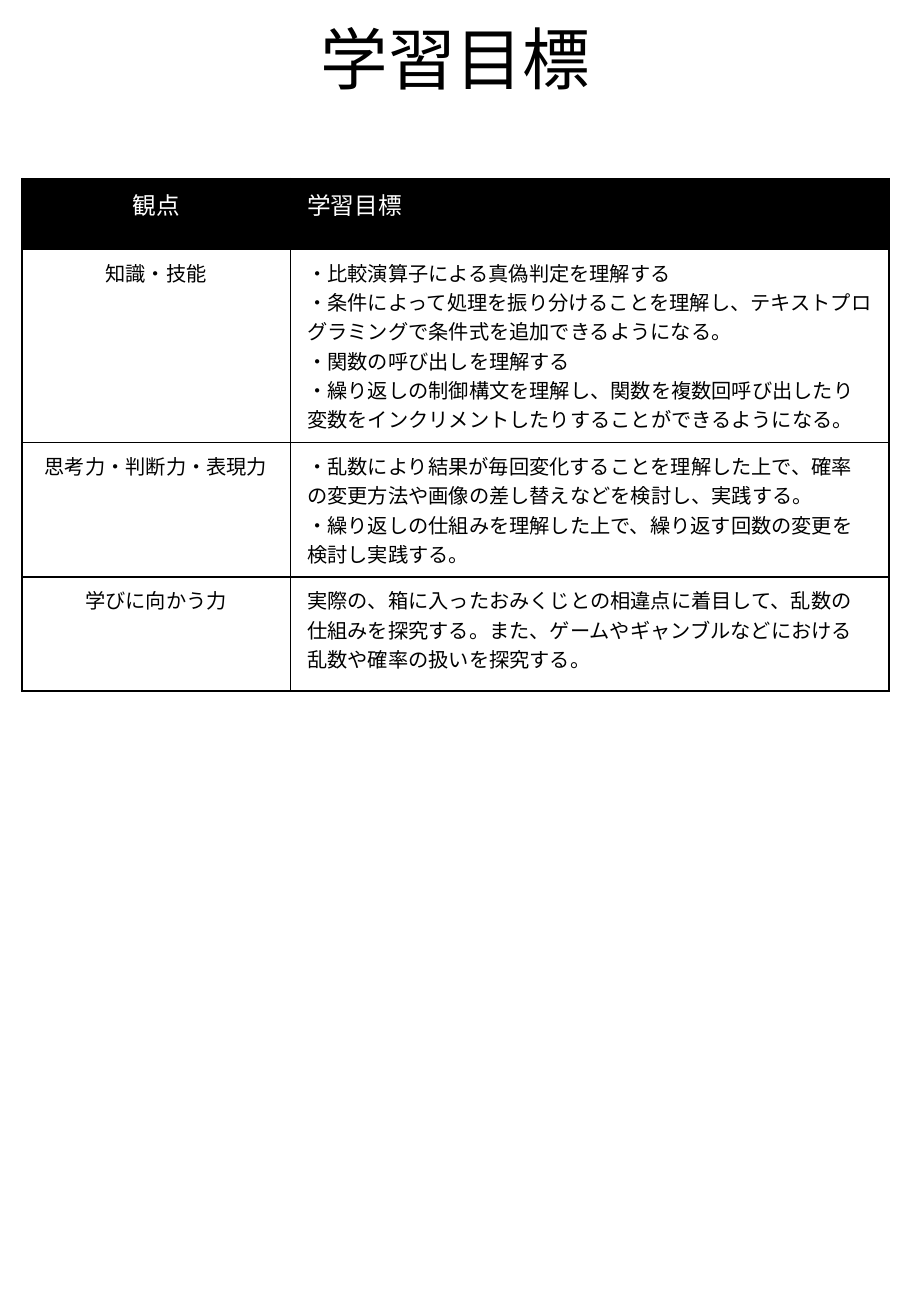
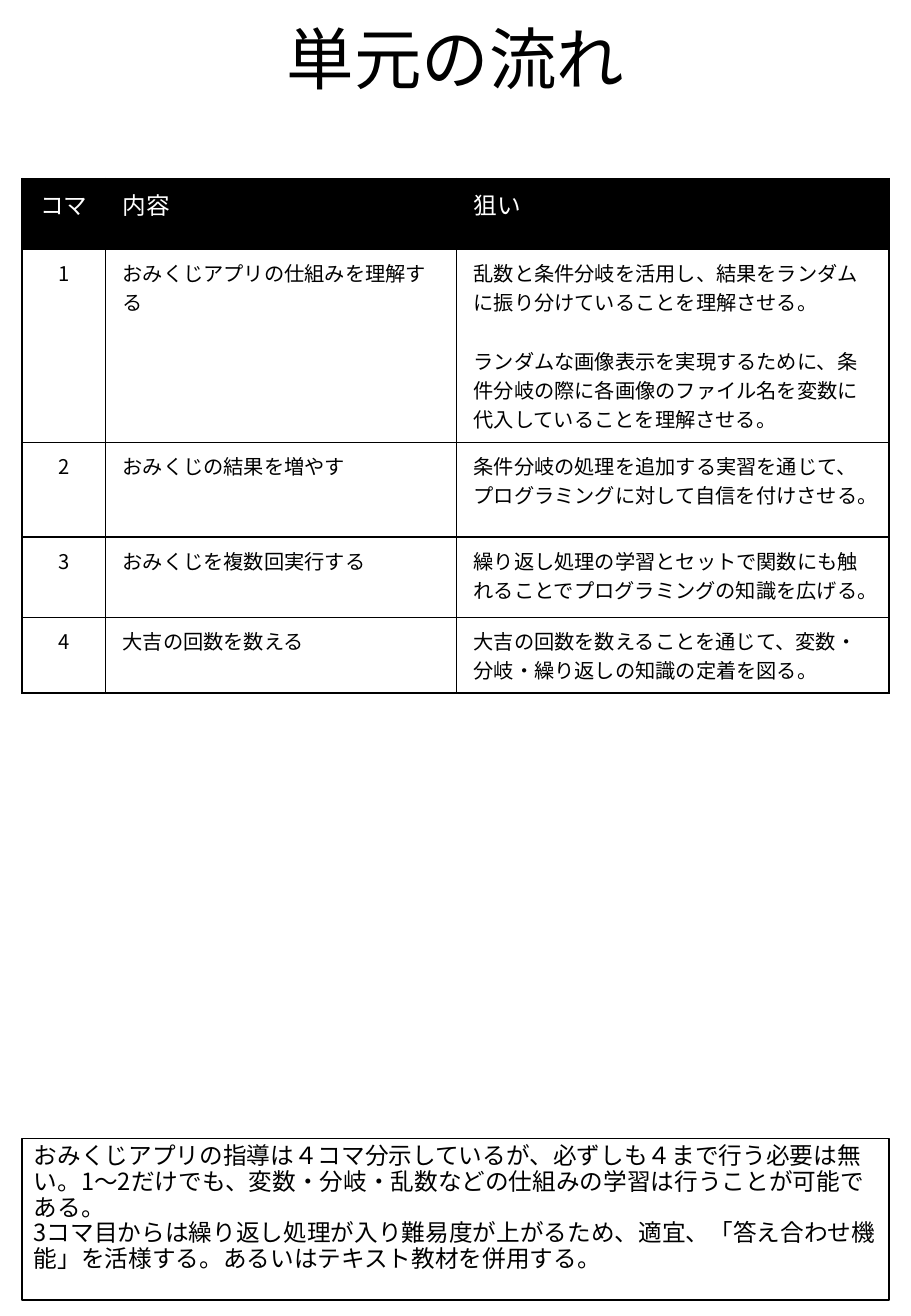
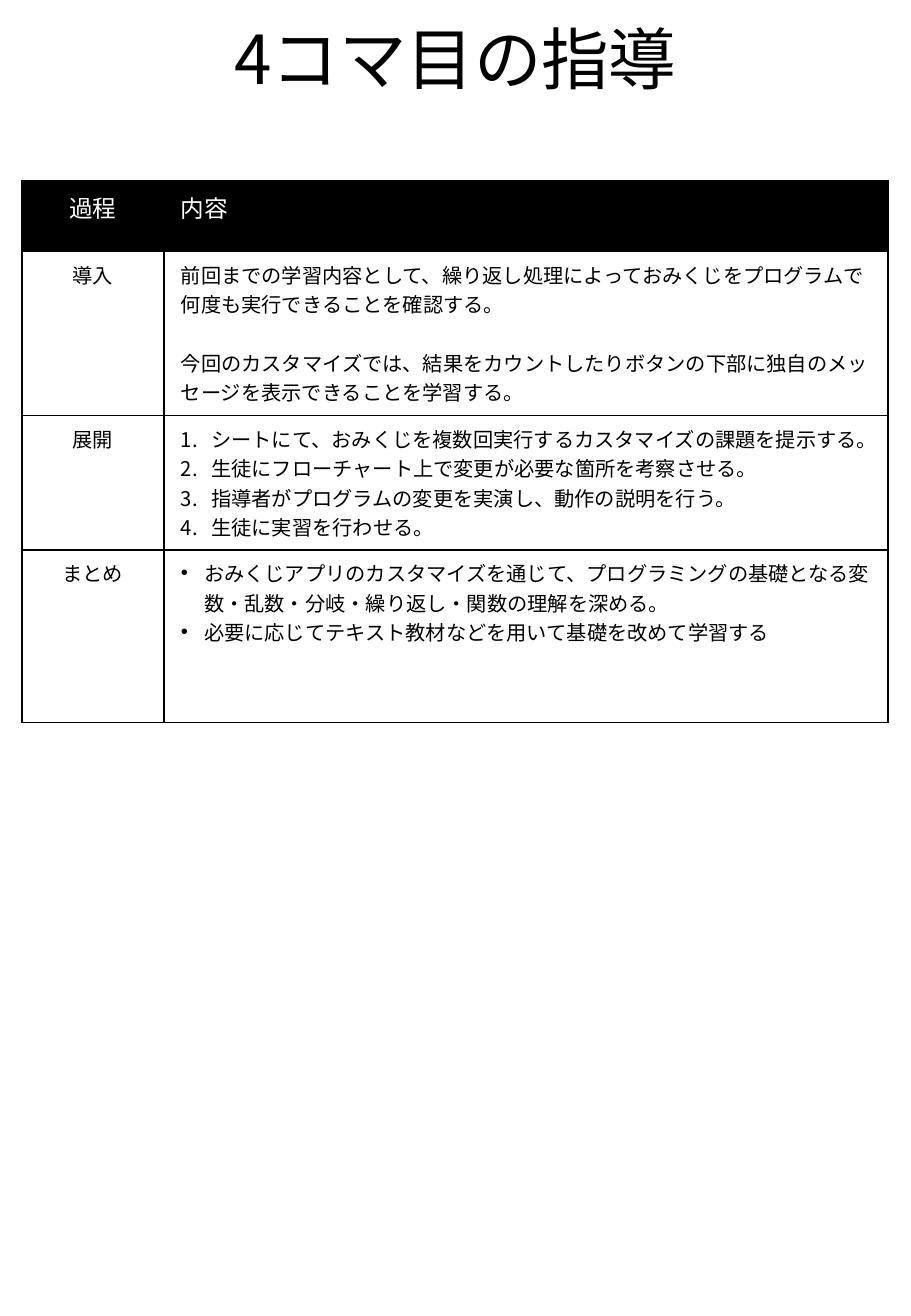
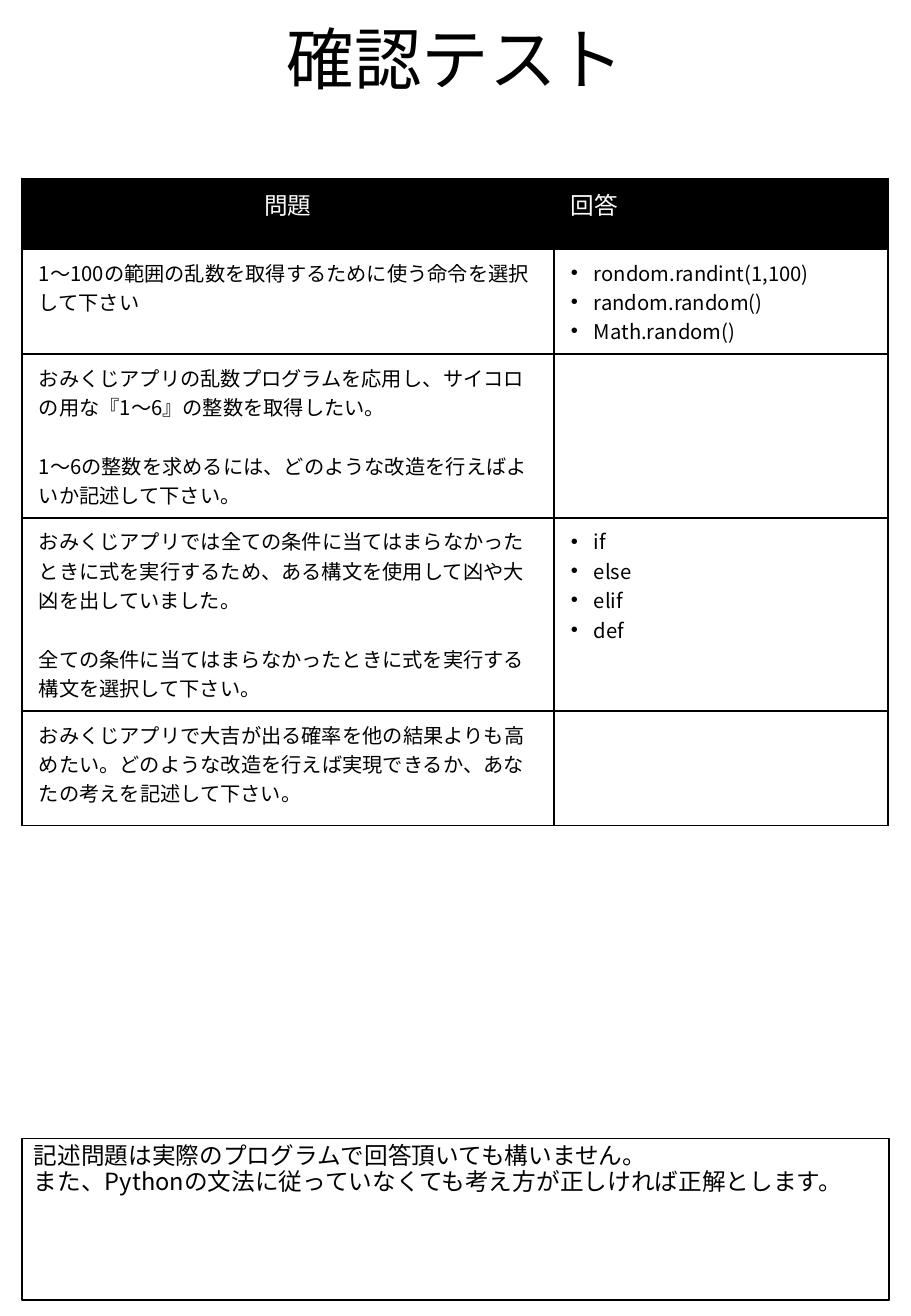
from lxml import etree
from pptx import Presentation
from pptx.dml.color import RGBColor
from pptx.enum import lang, shapes, text
from pptx.oxml import ns
from pptx.util import Inches, Pt

COLORS = {"ink": "000000", "paper": "FFFFFF"}
FONT = "Noto Sans CJK JP"
TITLE_BOX = (0.56, 0.06, 6.38, 0.81)
NOTE_BOX = (0.18, 9.37, 7.14, 1.33)
TABLE_LEFT, TABLE_TOP = 0.18, 1.47
HEADER_HEIGHT = 0.58
BLANK_LINE = 17.4  # points between separated paragraphs

# Paragraph style: (indent, bullet tag, bullet attributes)
BULLETS = {
    "dots": (0.19, "a:buChar", {"char": "•"}),
    "numbers": (0.25, "a:buAutoNum", {"type": "arabicPeriod"}),
}


def rgb(name):
    return RGBColor.from_string(COLORS[name])


def format_paragraph(p, size, color="ink", align=text.PP_ALIGN.LEFT, spacing=None):
    p.alignment = align
    p.line_spacing = spacing
    for r in p.runs:
        r.font.size = Pt(size)
        r.font.name = FONT
        r.font.bold = False
        r.font.color.rgb = rgb(color)
        r.font.language_id = lang.MSO_LANGUAGE_ID.JAPANESE
        r.font.fill  # colour precedes the typefaces
        latin = r._r.rPr.find(ns.qn("a:latin"))
        latin.addnext(etree.Element(ns.qn("a:ea"), typeface=FONT))


def fill_text(tf, lines):
    """Put each line in its own paragraph and return the paragraphs."""
    tf.text = lines[0]
    for line in lines[1:]:
        tf.add_paragraph().text = line
    return tf.paragraphs


def add_bullet(p, style):
    indent, tag, attributes = BULLETS[style]
    pPr = p._p.get_or_add_pPr()
    pPr.set("marL", str(Inches(indent)))
    pPr.set("indent", str(-Inches(indent)))
    font = etree.SubElement(pPr, ns.qn("a:buFont"))
    font.set("typeface", "Arial" if style == "dots" else "+mj-lt")
    etree.SubElement(pPr, ns.qn(tag), attributes)


def add_borders(cell):
    tcPr = cell._tc.get_or_add_tcPr()
    for i, side in enumerate(("lnL", "lnR", "lnT", "lnB")):
        ln = etree.Element(ns.qn("a:" + side), w=str(Pt(1)))
        fill = etree.SubElement(ln, ns.qn("a:solidFill"))
        etree.SubElement(fill, ns.qn("a:srgbClr"), val=COLORS["ink"])
        tcPr.insert(i, ln)


def format_cell(cell, content, header, centered):
    """Content is a string, or a (style, lines) pair."""
    style, lines = ("plain", [content]) if isinstance(content, str) else content
    cell.margin_left = cell.margin_right = Inches(0.14)
    cell.margin_top = cell.margin_bottom = Inches(0.07)
    cell.fill.solid()
    cell.fill.fore_color.rgb = rgb("ink" if header else "paper")
    add_borders(cell)
    align = text.PP_ALIGN.CENTER if centered else text.PP_ALIGN.LEFT
    for i, p in enumerate(fill_text(cell.text_frame, lines)):
        format_paragraph(p, 14 if header else 12, "paper" if header else "ink", align)
        if style == "apart" and i:
            p.space_before = Pt(BLANK_LINE)
        if style in BULLETS:
            add_bullet(p, style)


def add_grid(s, left, top, widths, heights, rows, center_first=True):
    heights = [HEADER_HEIGHT] + heights
    frame = s.shapes.add_table(len(rows), len(widths), Inches(left), Inches(top),
                               Inches(sum(widths)), Inches(sum(heights)))
    table = frame.table
    table.first_row = table.horz_banding = False
    for column, width in zip(table.columns, widths):
        column.width = Inches(width)
    for row, height in zip(table.rows, heights):
        row.height = Inches(height)
    for i, row in enumerate(rows):
        for j, content in enumerate(row):
            centered = j == 0 and (i == 0 or center_first)
            format_cell(table.cell(i, j), content, i == 0, centered)


def add_note(s, box, lines):
    sp = s.shapes.add_shape(shapes.MSO_SHAPE.RECTANGLE, *map(Inches, box))
    sp.shadow.inherit = False
    sp.fill.solid()
    sp.fill.fore_color.rgb = rgb("paper")
    sp.line.color.rgb = rgb("ink")
    sp.line.width = Pt(1)
    tf = sp.text_frame
    tf.word_wrap = True
    tf.vertical_anchor = text.MSO_ANCHOR.TOP
    for p in fill_text(tf, lines):
        format_paragraph(p, 14, spacing=0.9)


def add_lesson_slide(prs, title, widths, heights, rows, top=TABLE_TOP,
                     center_first=True, note=None):
    s = prs.slides.add_slide(prs.slide_layouts[5])
    # Title
    sp = s.shapes.title
    sp.left, sp.top, sp.width, sp.height = map(Inches, TITLE_BOX)
    tf = sp.text_frame
    tf.text = title
    tf.auto_size = text.MSO_AUTO_SIZE.NONE
    tf.vertical_anchor = text.MSO_ANCHOR.BOTTOM
    format_paragraph(tf.paragraphs[0], 40, align=text.PP_ALIGN.CENTER, spacing=0.9)
    # Table and note
    add_grid(s, TABLE_LEFT, top, widths, heights, rows, center_first)
    if note:
        add_note(s, NOTE_BOX, note)


def main():
    prs = Presentation()
    prs.slide_width, prs.slide_height = Inches(7.5), Inches(10.83)

    # Learning goals
    add_lesson_slide(prs, "学習目標", [2.21, 4.93], [1.09, 0.77, 0.94], [
        ("観点", "学習目標"),
        ("知識・技能", ("plain", [
            "・比較演算子による真偽判定を理解する",
            "・条件によって処理を振り分けることを理解し、テキストプログラミングで条件式を追加できるようになる。",
            "・関数の呼び出しを理解する",
            "・繰り返しの制御構文を理解し、関数を複数回呼び出したり変数をインクリメントしたりすることができるようになる。"])),
        ("思考力・判断力・表現力", ("plain", [
            "・乱数により結果が毎回変化することを理解した上で、確率の変更方法や画像の差し替えなどを検討し、実践する。",
            "・繰り返しの仕組みを理解した上で、繰り返す回数の変更を検討し実践する。"])),
        ("学びに向かう力",
         "実際の、箱に入ったおみくじとの相違点に着目して、乱数の仕組みを探究する。"
         "また、ゲームやギャンブルなどにおける乱数や確率の扱いを探究する。"),
    ])

    # Unit flow
    add_lesson_slide(prs, "単元の流れ", [0.69, 2.89, 3.56], [1.1, 0.78, 0.66, 0.58], [
        ("コマ", "内容", "狙い"),
        ("1", "おみくじアプリの仕組みを理解する", ("apart", [
            "乱数と条件分岐を活用し、結果をランダムに振り分けていることを理解させる。",
            "ランダムな画像表示を実現するために、条件分岐の際に各画像のファイル名を変数に代入していることを理解させる。"])),
        ("2", "おみくじの結果を増やす",
         "条件分岐の処理を追加する実習を通じて、プログラミングに対して自信を付けさせる。"),
        ("3", "おみくじを複数回実行する",
         "繰り返し処理の学習とセットで関数にも触れることでプログラミングの知識を広げる。"),
        ("4", "大吉の回数を数える",
         "大吉の回数を数えることを通じて、変数・分岐・繰り返しの知識の定着を図る。"),
    ], note=[
        "おみくじアプリの指導は４コマ分示しているが、必ずしも４まで行う必要は無い。"
        "1～2だけでも、変数・分岐・乱数などの仕組みの学習は行うことが可能である。",
        "3コマ目からは繰り返し処理が入り難易度が上がるため、適宜、「答え合わせ機能」を活様する。"
        "あるいはテキスト教材を併用する。"])

    # Fourth lesson
    add_lesson_slide(prs, "4コマ目の指導", [1.17, 5.96], [1.1, 0.78, 1.42], [
        ("過程", "内容"),
        ("導入", ("apart", [
            "前回までの学習内容として、繰り返し処理によっておみくじをプログラムで何度も実行できることを確認する。",
            "今回のカスタマイズでは、結果をカウントしたりボタンの下部に独自のメッセージを表示できることを学習する。"])),
        ("展開", ("numbers", [
            "シートにて、おみくじを複数回実行するカスタマイズの課題を提示する。",
            "生徒にフローチャート上で変更が必要な箇所を考察させる。",
            "指導者がプログラムの変更を実演し、動作の説明を行う。",
            "生徒に実習を行わせる。"])),
        ("まとめ", ("dots", [
            "おみくじアプリのカスタマイズを通じて、プログラミングの基礎となる変数・乱数・分岐・繰り返し・関数の理解を深める。",
            "必要に応じてテキスト教材などを用いて基礎を改めて学習する"])),
    ], top=1.49)

    # Quiz
    add_lesson_slide(prs, "確認テスト", [4.38, 2.75], [0.77, 0.94, 0.94, 0.94], [
        ("問題", "回答"),
        ("1～100の範囲の乱数を取得するために使う命令を選択して下さい",
         ("dots", ["rondom.randint(1,100)", "random.random()", "Math.random()"])),
        (("apart", [
            "おみくじアプリの乱数プログラムを応用し、サイコロの用な『1～6』の整数を取得したい。",
            "1～6の整数を求めるには、どのような改造を行えばよいか記述して下さい。"]), ""),
        (("apart", [
            "おみくじアプリでは全ての条件に当てはまらなかったときに式を実行するため、ある構文を使用して凶や大凶を出していました。",
            "全ての条件に当てはまらなかったときに式を実行する構文を選択して下さい。"]),
         ("dots", ["if", "else", "elif", "def"])),
        ("おみくじアプリで大吉が出る確率を他の結果よりも高めたい。"
         "どのような改造を行えば実現できるか、あなたの考えを記述して下さい。", ""),
    ], center_first=False, note=[
        "記述問題は実際のプログラムで回答頂いても構いません。",
        "また、Pythonの文法に従っていなくても考え方が正しければ正解とします。"])

    prs.save("out.pptx")


if __name__ == "__main__":
    main()
